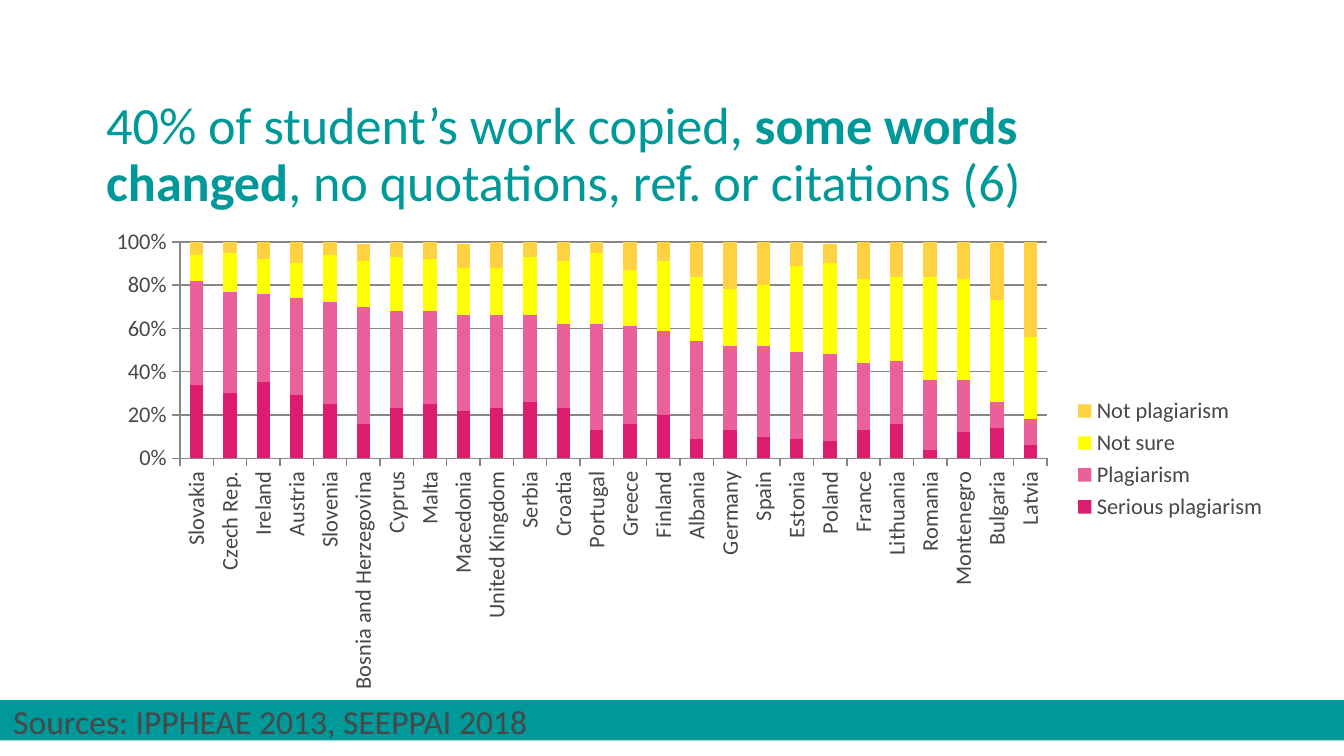
from pptx import Presentation
from pptx.chart.data import CategoryChartData
from pptx.dml.color import RGBColor
from pptx.enum.chart import XL_CHART_TYPE as ChartType, XL_LEGEND_POSITION as LegendPosition
from pptx.enum.chart import XL_TICK_MARK as TickMark
from pptx.enum.shapes import MSO_SHAPE as ShapeKind
from pptx.enum.text import MSO_ANCHOR as Anchor, MSO_AUTO_SIZE as AutoSize, PP_ALIGN as Align
from pptx.util import Inches, Pt

# Content
TITLE_RUNS = [
    ("40% of student’s work copied, ", False),
    ("some words changed", True),
    (", no quotations, ref. or citations (6)", False),
]
SOURCES = "Sources: IPPHEAE 2013, SEEPPAI 2018"
COUNTRIES = [
    "Slovakia", "Czech Rep.", "Ireland", "Austria", "Slovenia", "Bosnia and Herzegovina",
    "Cyprus", "Malta", "Macedonia", "United Kingdom", "Serbia", "Croatia", "Portugal",
    "Greece", "Finland", "Albania", "Germany", "Spain", "Estonia", "Poland", "France",
    "Lithuania", "Romania", "Montenegro", "Bulgaria", "Latvia",
]
# Series name, colour, share of answers per country in percent
ANSWERS = [
    ("Serious plagiarism", "DC1C6E",
     [34, 30, 35, 29, 25, 16, 23, 25, 22, 23, 26, 23, 13,
      16, 20, 9, 13, 10, 9, 8, 13, 16, 4, 12, 14, 6]),
    ("Plagiarism", "EB5F9B",
     [48, 47, 41, 45, 47, 54, 45, 43, 44, 43, 40, 39, 49,
      45, 39, 45, 39, 42, 40, 40, 31, 29, 32, 24, 12, 12]),
    ("Not sure", "FFFF00",
     [12, 18, 16, 16, 22, 21, 25, 24, 22, 22, 27, 29, 33,
      26, 32, 30, 26, 28, 40, 42, 39, 39, 48, 47, 47, 38]),
    ("Not plagiarism", "FFD242",
     [6, 6, 9, 10, 6, 8, 7, 9, 11, 12, 8, 9, 5,
      13, 9, 17, 22, 20, 11, 9, 17, 17, 16, 18, 27, 44]),
]
THEME = {
    "font": "Calibri", "teal": "009999", "text": "484749", "line": "868686",
    "title_size": 28, "sources_size": 18, "chart_size": 12,
}
BOXES = {  # left, top, width, height
    "title": (0.69, 0.69, 7.92, 0.94),
    "chart": (0.69, 1.63, 8.84, 3.57),
    "bar": (0, 5.21, 10, 0.3),
    "sources": (0, 5.17, 4.07, 0.4),
}


def box(name):
    return [Inches(length) for length in BOXES[name]]


def color(value):
    return RGBColor.from_string(value)


def set_values(target, values):
    for name, value in values.items():
        setattr(target, name, value)


def style_font(font, size, font_color, bold=False):
    set_values(font, {"name": THEME["font"], "size": Pt(THEME[size]), "bold": bold})
    font.color.rgb = color(THEME[font_color])


# Widescreen slide, 16 to 9
presentation = Presentation()
slide_width = Inches(10)
set_values(presentation, {"slide_width": slide_width, "slide_height": slide_width * 9 // 16})
slide = presentation.slides.add_slide(presentation.slide_layouts[5])

# Footer bar
bar = slide.shapes.add_shape(ShapeKind.RECTANGLE, *box("bar"))
bar.shadow.inherit = False
bar.fill.solid()
bar.fill.fore_color.rgb = color(THEME["teal"])
bar.line.fill.background()

# Title
title = slide.shapes.title
set_values(title, dict(zip(("left", "top", "width", "height"), box("title"))))
set_values(title.text_frame, {
    "word_wrap": True, "auto_size": AutoSize.NONE, "vertical_anchor": Anchor.MIDDLE})
paragraph = title.text_frame.paragraphs[0]
set_values(paragraph, {"alignment": Align.LEFT, "line_spacing": 0.9})
for text, bold in TITLE_RUNS:
    run = paragraph.add_run()
    run.text = text
    style_font(run.font, "title_size", "teal", bold)

# Stacked chart
chart_data = CategoryChartData(number_format="0%")
chart_data.categories = COUNTRIES
for name, _, percents in ANSWERS:
    chart_data.add_series(name, [percent / 100 for percent in percents])
chart = slide.shapes.add_chart(ChartType.COLUMN_STACKED, *box("chart"), chart_data).chart
set_values(chart, {"has_title": False, "has_legend": True})
set_values(chart.legend, {"position": LegendPosition.RIGHT, "include_in_layout": False})
style_font(chart.font, "chart_size", "text")

plot = chart.plots[0]
set_values(plot, {"gap_width": 150, "overlap": 100, "vary_by_categories": False})
for series, (_, series_color, _) in zip(plot.series, ANSWERS):
    series.format.fill.solid()
    series.format.fill.fore_color.rgb = color(series_color)

# Axes, with country names reading upwards
set_values(chart.value_axis, {
    "minimum_scale": 0, "maximum_scale": 1, "major_unit": 0.2, "has_major_gridlines": True})
set_values(chart.value_axis.tick_labels, {
    "number_format": "0%", "number_format_is_linked": False})
chart.value_axis.major_gridlines.format.line.color.rgb = color(THEME["line"])
for axis in (chart.category_axis, chart.value_axis):
    axis.major_tick_mark = TickMark.OUTSIDE
    axis.format.line.color.rgb = color(THEME["line"])
    style_font(axis.tick_labels.font, "chart_size", "text")
chart.category_axis._element.get_or_add_txPr().bodyPr.set("rot", "-5400000")

# Sources
sources = slide.shapes.add_textbox(*box("sources"))
set_values(sources.text_frame, {"word_wrap": False, "auto_size": AutoSize.SHAPE_TO_FIT_TEXT})
run = sources.text_frame.paragraphs[0].add_run()
run.text = SOURCES
style_font(run.font, "sources_size", "text")

presentation.save("out.pptx")
